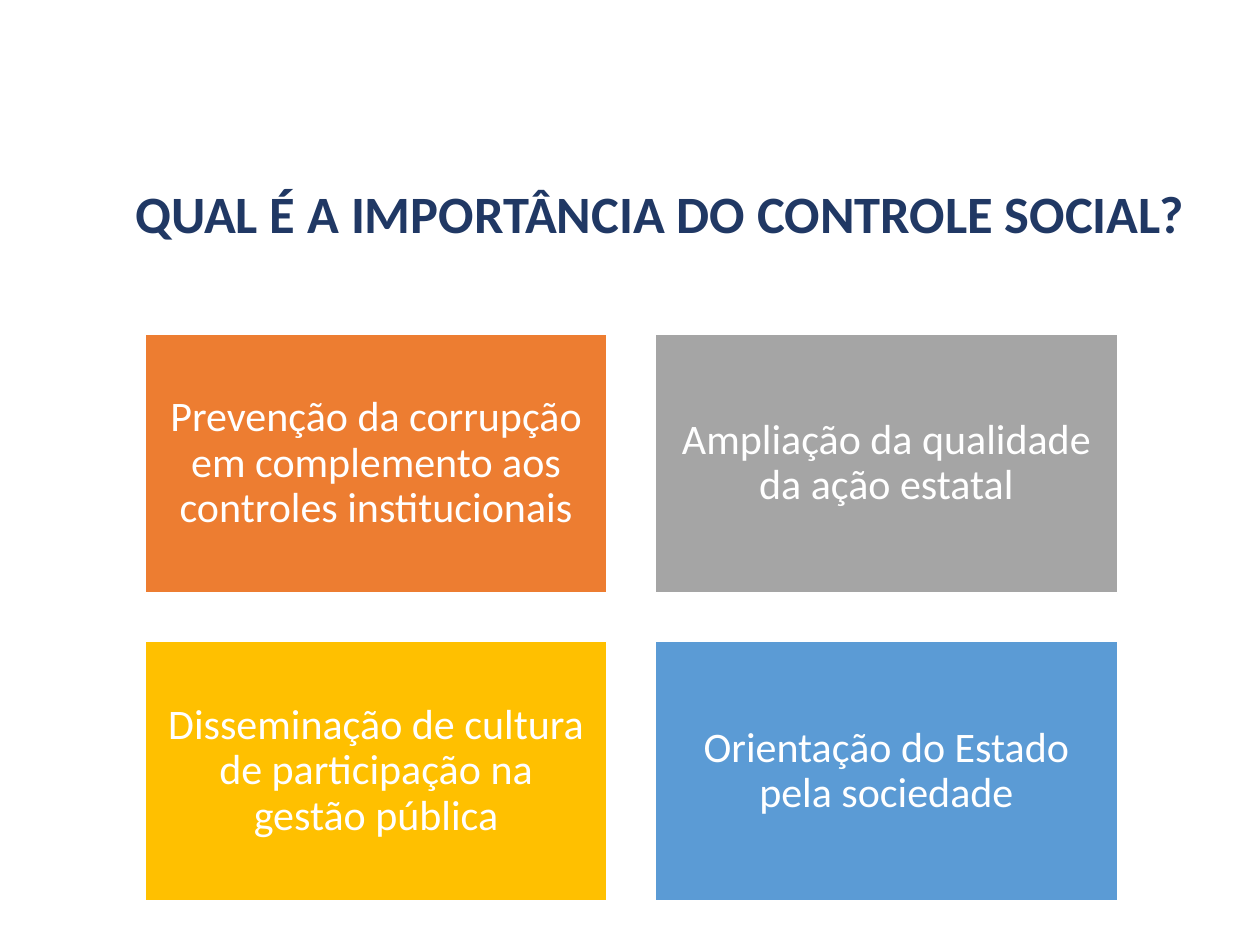
from pptx import Presentation
from pptx.dml.color import RGBColor
from pptx.enum.shapes import MSO_SHAPE
from pptx.enum.text import MSO_ANCHOR, PP_ALIGN
from pptx.util import Inches, Pt

NAVY = RGBColor(0x20, 0x38, 0x64)
WHITE = RGBColor(0xFF, 0xFF, 0xFF)
ORANGE = RGBColor(0xED, 0x7D, 0x31)
GRAY = RGBColor(0xA5, 0xA5, 0xA5)
GOLD = RGBColor(0xFF, 0xC0, 0x00)
BLUE = RGBColor(0x5B, 0x9B, 0xD5)

TITLE = "QUAL É A IMPORTÂNCIA DO CONTROLE SOCIAL?"
CARDS = [
    ("Prevenção da corrupção em complemento aos controles institucionais", ORANGE),
    ("Ampliação da qualidade da ação estatal", GRAY),
    ("Disseminação de cultura de participação na gestão pública", GOLD),
    ("Orientação do Estado pela sociedade", BLUE),
]
COLS = 2
LEFT, TOP = 1.15, 2.65
WIDTH, HEIGHT = 3.67, 2.06
GAP = 0.38


def write(shape, text, size, color, bold=False):
    frame = shape.text_frame
    frame.word_wrap = True
    frame.vertical_anchor = MSO_ANCHOR.MIDDLE
    para = frame.paragraphs[0]
    para.alignment = PP_ALIGN.CENTER
    para.line_spacing = 0.9
    run = para.add_run()
    run.text = text
    font = run.font
    font.name = "Calibri"
    font.size = Pt(size)
    font.bold = bold
    font.color.rgb = color
    return frame


def add_card(slide, index, text, fill):
    row, col = divmod(index, COLS)
    card = slide.shapes.add_shape(
        MSO_SHAPE.RECTANGLE,
        Inches(LEFT + col * (WIDTH + GAP)),
        Inches(TOP + row * (HEIGHT + GAP)),
        Inches(WIDTH),
        Inches(HEIGHT),
    )
    card.shadow.inherit = False
    card.fill.solid()
    card.fill.fore_color.rgb = fill
    card.line.color.rgb = WHITE
    card.line.width = Pt(1)
    frame = write(card, text, 24, WHITE)
    frame.margin_left = frame.margin_right = Inches(0.12)
    frame.margin_top = frame.margin_bottom = Inches(0.12)


def main():
    deck = Presentation()
    deck.slide_width, deck.slide_height = Inches(10), Inches(7.5)
    slide = deck.slides.add_slide(deck.slide_layouts[6])
    title = slide.shapes.add_textbox(
        Inches(0.91), Inches(1.03), Inches(8.66), Inches(1.38)
    )
    write(title, TITLE, 30, NAVY, True)
    for index, (text, fill) in enumerate(CARDS):
        add_card(slide, index, text, fill)
    deck.save("out.pptx")


if __name__ == "__main__":
    main()
